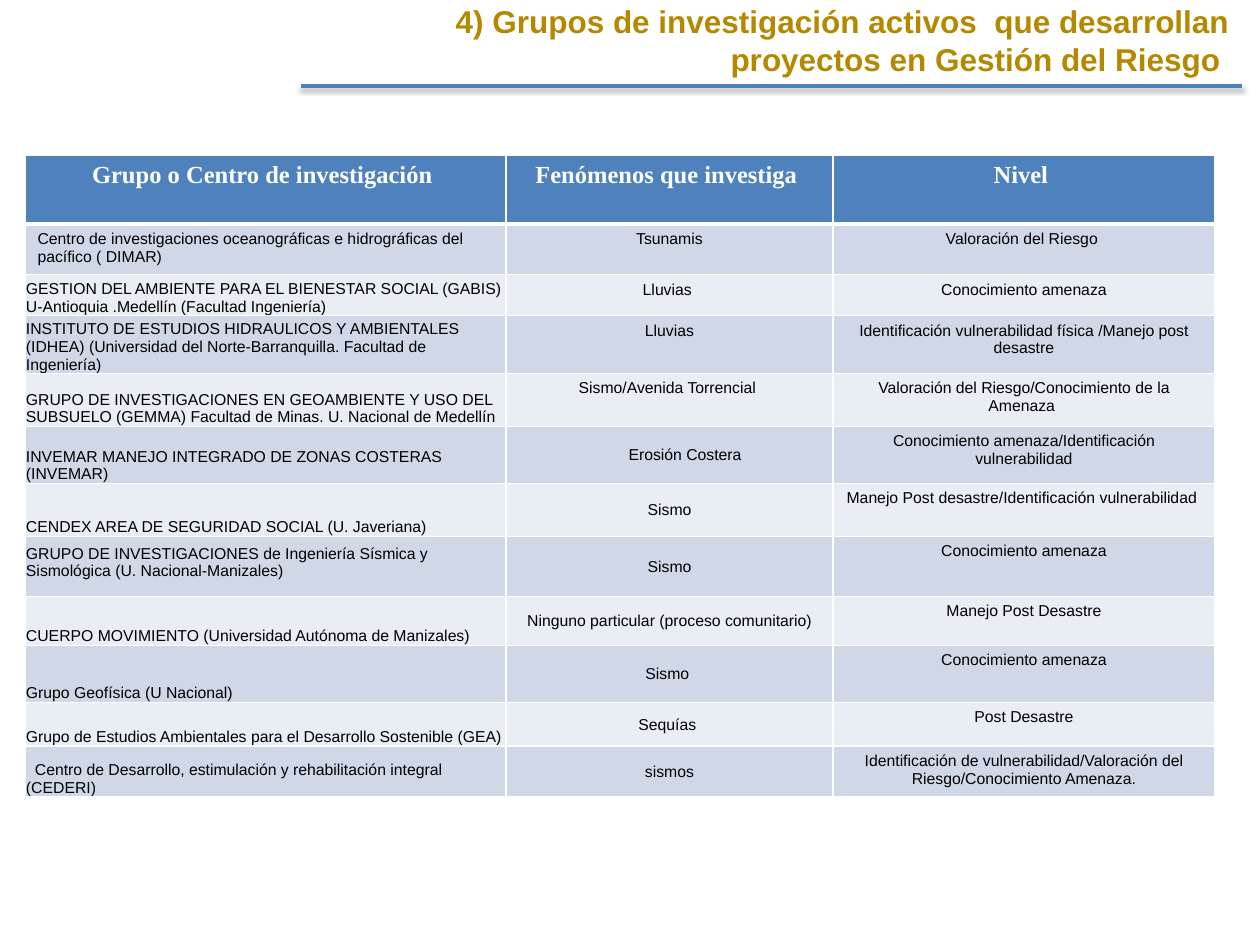
"""Builds the slide on research groups active in risk management."""
from lxml import etree
from pptx import Presentation
from pptx import util as u
from pptx.dml.color import RGBColor
from pptx.enum import shapes, text
from pptx.oxml import parse_xml
from pptx.oxml.ns import nsdecls, qn

COLUMNS = [481, 327, 382]
ROW_HEIGHTS = [69, 49, 41, 53, 53, 57, 53, 60, 49, 57, 44, 35]
HEADERS = ["Grupo o Centro de investigación ", "Fenómenos que investiga ", "Nivel "]
GROUPS = [
    ("Centro de investigaciones oceanográficas e hidrográficas del pacífico ( DIMAR)",
     "Tsunamis", "Valoración del Riesgo "),
    ("GESTION DEL AMBIENTE PARA EL BIENESTAR SOCIAL (GABIS) "
     "U-Antioquia .Medellín (Facultad Ingeniería)",
     "Lluvias ", "Conocimiento amenaza"),
    ("INSTITUTO DE ESTUDIOS HIDRAULICOS Y AMBIENTALES (IDHEA) "
     "(Universidad del Norte-Barranquilla. Facultad de Ingeniería)",
     "Lluvias", "Identificación vulnerabilidad física /Manejo post desastre"),
    ("GRUPO DE INVESTIGACIONES EN GEOAMBIENTE Y USO DEL SUBSUELO (GEMMA) "
     "Facultad de Minas. U. Nacional de Medellín",
     "Sismo/Avenida Torrencial ", "Valoración del Riesgo/Conocimiento de la Amenaza "),
    ("INVEMAR MANEJO INTEGRADO DE ZONAS COSTERAS (INVEMAR)",
     "Erosión Costera", "Conocimiento amenaza/Identificación vulnerabilidad"),
    ("CENDEX AREA DE SEGURIDAD SOCIAL (U. Javeriana)",
     "Sismo", "Manejo Post desastre/Identificación vulnerabilidad "),
    ("GRUPO DE INVESTIGACIONES de Ingeniería Sísmica y Sismológica (U. Nacional-Manizales)",
     "Sismo", "Conocimiento amenaza"),
    ("CUERPO MOVIMIENTO (Universidad Autónoma de Manizales)",
     "Ninguno particular (proceso comunitario)", "Manejo Post Desastre"),
    ("Grupo Geofísica (U Nacional)", "Sismo ", "Conocimiento amenaza"),
    ("Grupo de Estudios Ambientales para el Desarrollo Sostenible (GEA)",
     "Sequías ", "Post Desastre"),
    ("Centro de Desarrollo, estimulación y rehabilitación integral (CEDERI)",
     "sismos",
     "Identificación de vulnerabilidad/Valoración del Riesgo/Conocimiento Amenaza."),
]
TITLE_FONT = {"name": "Arial", "size": u.Pt(18), "bold": True}
HEADER_FONT = {"name": "Times New Roman", "size": u.Pt(14), "bold": True}
BODY_FONT = {"name": "Arial", "size": u.Pt(9), "bold": False}


def px(n):
    return u.Emu(round(n * 914400 / 126))


def rgb(value):
    return RGBColor.from_string(value)


def assign(obj, values):
    for name, value in values.items():
        setattr(obj, name, value)


class Deck:
    """Holds the style and the current slide."""

    accent, gold, white, black = "4F81BD", "B48900", "FFFFFF", "000000"
    bands = ["D0D8E8", "E9EDF4"]
    tight = {"margin_left": px(1), "margin_right": px(1), "margin_top": px(1), "margin_bottom": 0}

    def __init__(self):
        self.prs = Presentation()
        assign(self.prs, {"slide_width": px(1260), "slide_height": px(945)})
        self.s = self.prs.slides.add_slide(self.prs.slide_layouts[5])

    def label(self, tf, words, font, color, align):
        p = tf.paragraphs[0]
        p.alignment = align
        r = p.add_run()
        r.text = words
        assign(r.font, font)
        r.font.color.rgb = rgb(color)

    def title(self, words, x, y, w, h):
        sp = self.s.shapes.title
        assign(sp, {"left": px(x), "top": px(y), "width": px(w), "height": px(h)})
        tf = sp.text_frame
        assign(tf, {"word_wrap": True, "vertical_anchor": text.MSO_ANCHOR.TOP,
                    "auto_size": text.MSO_AUTO_SIZE.SHAPE_TO_FIT_TEXT})
        self.label(tf, words, TITLE_FONT, self.gold, text.PP_ALIGN.RIGHT)

    def rule(self, x1, x2, y):
        sp = self.s.shapes.add_connector(
            shapes.MSO_CONNECTOR.STRAIGHT, px(x1), px(y), px(x2), px(y))
        sp.line.color.rgb = rgb(self.accent)
        sp.line.width = u.Pt(2)
        sp._element.spPr.append(parse_xml(
            f'<a:effectLst {nsdecls("a")}><a:outerShdw blurRad="{u.Pt(3.1)}" '
            f'dist="{u.Pt(1.6)}" dir="5400000" rotWithShape="0"><a:srgbClr val="{self.black}">'
            '<a:alpha val="38000"/></a:srgbClr></a:outerShdw></a:effectLst>'))

    def cell(self, cell, words, font, color, fill, align, bottom=1):
        cell.fill.solid()
        cell.fill.fore_color.rgb = rgb(fill)
        self.label(cell.text_frame, words, font, color, align)
        tcPr = cell._tc.get_or_add_tcPr()
        for i, (side, width) in enumerate([("L", 1), ("R", 1), ("T", 1), ("B", bottom)]):
            ln = etree.Element(qn(f"a:ln{side}"), w=str(u.Pt(width)))
            paint = etree.SubElement(ln, qn("a:solidFill"))
            etree.SubElement(paint, qn("a:srgbClr"), val=self.white)
            tcPr.insert(i, ln)

    def table(self, x, y, columns, heights, headers, rows):
        tbl = self.s.shapes.add_table(len(heights), len(columns), px(x), px(y),
                                      px(sum(columns)), px(sum(heights))).table
        for col, w in zip(tbl.columns, columns):
            col.width = px(w)
        for row, h in zip(tbl.rows, heights):
            row.height = px(h)
        center, left = text.PP_ALIGN.CENTER, text.PP_ALIGN.LEFT
        for j, words in enumerate(headers):
            self.cell(tbl.cell(0, j), words, HEADER_FONT, self.white, self.accent, center, 3)
        for i, row in enumerate(rows, 1):
            for j, words in enumerate(row):
                self.cell(tbl.cell(i, j), words, BODY_FONT, self.black,
                          self.bands[(i - 1) % 2], center if j else left)
            if i > 1:
                self.snug(tbl.cell(i, 0), text.MSO_ANCHOR.BOTTOM)
            if i > 4:
                self.snug(tbl.cell(i, 1), text.MSO_ANCHOR.MIDDLE)
        return tbl

    def snug(self, cell, anchor):
        assign(cell, {**self.tight, "vertical_anchor": anchor})


def main():
    deck = Deck()
    deck.title("4) Grupos de investigación activos  que desarrollan "
               "proyectos en Gestión del Riesgo ", 301, -4, 941, 89)
    tbl = deck.table(25, 155, COLUMNS, ROW_HEIGHTS, HEADERS, GROUPS)
    tbl.cell(5, 1).margin_left = px(32)
    tbl.cell(7, 0).margin_bottom = px(16)
    indented = tbl.cell(11, 0).text_frame.paragraphs[0]
    indented._p.get_or_add_pPr().set("indent", str(px(9)))
    deck.rule(1242, 301, 86)
    deck.prs.save("out.pptx")


if __name__ == "__main__":
    main()
